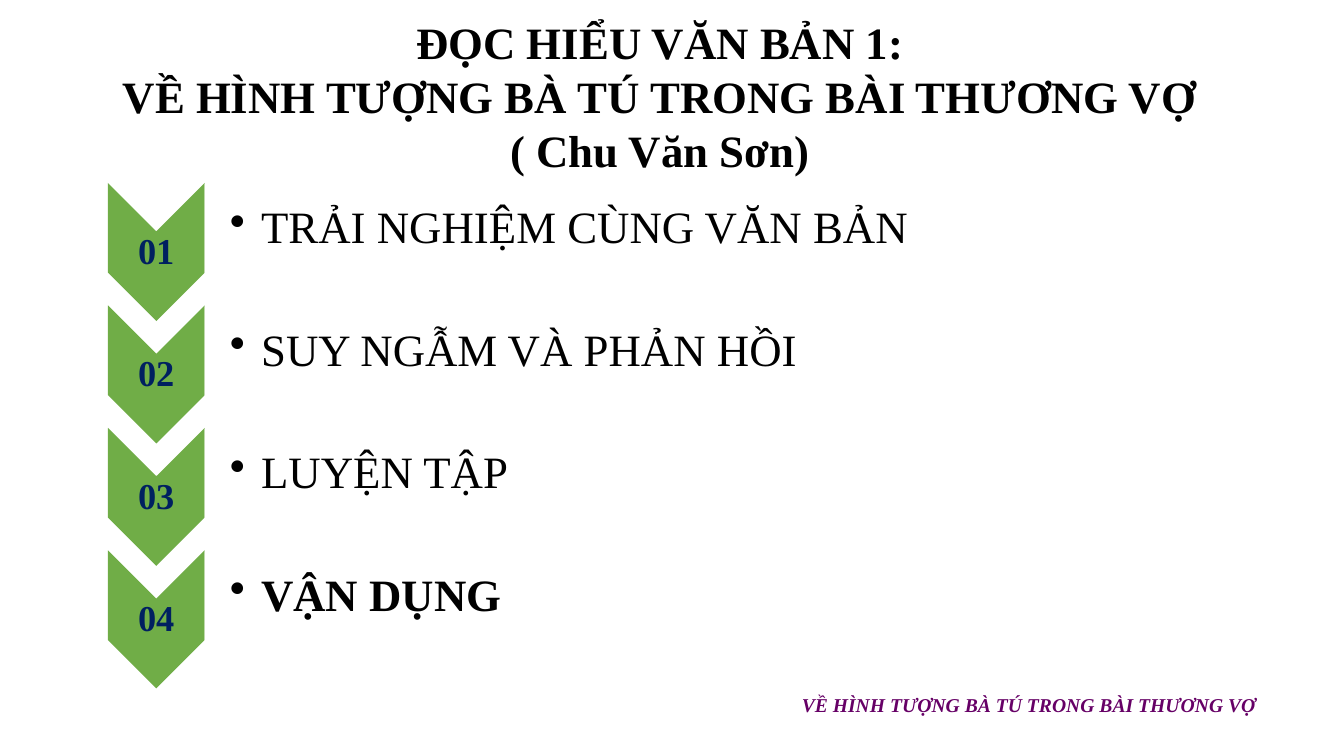
"""Build a lesson outline slide with four numbered steps."""
from lxml.etree import SubElement
from pptx import Presentation
from pptx.dml.color import RGBColor
from pptx.enum.shapes import MSO_SHAPE
from pptx.enum.text import MSO_ANCHOR, PP_ALIGN
from pptx.oxml.ns import qn
from pptx.util import Inches, Pt

COLORS = {"step": "70AD47", "number": "002060", "panel": "FFFFFF",
          "ink": "000000", "footer": "660066"}
LESSON = "VỀ HÌNH TƯỢNG BÀ TÚ TRONG BÀI THƯƠNG VỢ"
STEPS = ["TRẢI NGHIỆM CÙNG VĂN BẢN", "SUY NGẪM VÀ PHẢN HỒI", "LUYỆN TẬP", "VẬN DỤNG"]
FIRST_STEP, STEP_PITCH = 2.5, 1.215
CHEVRON_CENTER, CHEVRON_LENGTH, CHEVRON_WIDTH = 1.55, 1.37, 0.96
PANEL_LEFT, PANEL_LENGTH, PANEL_HEIGHT = 2.03, 10.56, 0.89

presentation = Presentation()
presentation.slide_width, presentation.slide_height = Inches(13.33), Inches(7.5)
slide = presentation.slides.add_slide(presentation.slide_layouts[6])


def add_turned(outline, center_x, center_y, length, breadth, color):
    turned = slide.shapes.add_shape(
        outline, Inches(center_x - length / 2), Inches(center_y - breadth / 2),
        Inches(length), Inches(breadth))
    turned.rotation = 90
    turned.shadow.inherit = False
    turned.fill.solid()
    turned.fill.fore_color.rgb = RGBColor.from_string(COLORS[color])
    turned.line.fill.background()
    return turned


def add_text(place, lines, size, color, frame_format, paragraph_format, **font_format):
    frame = slide.shapes.add_textbox(*map(Inches, place)).text_frame
    for name, value in frame_format.items():
        setattr(frame, name, value)
    frame.text = "\n".join(lines)
    for paragraph in frame.paragraphs:
        for name, value in paragraph_format.items():
            setattr(paragraph, name, value)
        font = paragraph.runs[0].font
        font.color.rgb = RGBColor.from_string(COLORS[color])
        for name, value in {"name": "Times New Roman", "size": Pt(size), **font_format}.items():
            setattr(font, name, value)
    return frame


tight = {"word_wrap": True, "vertical_anchor": MSO_ANCHOR.MIDDLE,
         **{f"margin_{side}": Inches(0.02) for side in ("left", "top", "right", "bottom")}}
centered = {"alignment": PP_ALIGN.CENTER}

for index, step in enumerate(STEPS):
    middle = FIRST_STEP + index * STEP_PITCH
    add_turned(MSO_SHAPE.CHEVRON, CHEVRON_CENTER, middle,
               CHEVRON_LENGTH, CHEVRON_WIDTH, "step")
    add_text((CHEVRON_CENTER - CHEVRON_WIDTH / 2, middle - 0.2, CHEVRON_WIDTH, 0.41),
             [f"{index + 1:02}"], 26, "number", tight,
             {**centered, "line_spacing": 0.9}, bold=True)

    panel = add_turned(MSO_SHAPE.ROUND_2_SAME_RECTANGLE, PANEL_LEFT + PANEL_LENGTH / 2,
                       middle - 0.23, PANEL_HEIGHT, PANEL_LENGTH, "panel")
    panel_color = panel.fill._xPr.find(qn("a:solidFill"))[0]
    SubElement(panel_color, qn("a:alpha"), val="90000")
    heading = add_text((PANEL_LEFT, middle - 0.63, 10.52, 0.81), [step], 32, "ink",
                       {**tight, "margin_left": Inches(0.25)},
                       {"level": 1, "line_spacing": 0.9}, bold=step == STEPS[-1])
    bullet = heading.paragraphs[0]._p.get_or_add_pPr()
    bullet.set("marL", str(Inches(0.31)))
    bullet.set("indent", str(-Inches(0.31)))
    SubElement(bullet, qn("a:buChar"), char="•")

add_text((1.07, 0.1, 10.95, 1.72), ["ĐỌC HIỂU VĂN BẢN 1:", LESSON, "( Chu Văn Sơn)"],
         32, "ink", {"word_wrap": False}, centered, bold=True)
add_text((7.75, 6.83, 4.91, 0.34), [LESSON], 14, "footer",
         {"word_wrap": False}, centered, bold=True, italic=True)

presentation.save("out.pptx")
